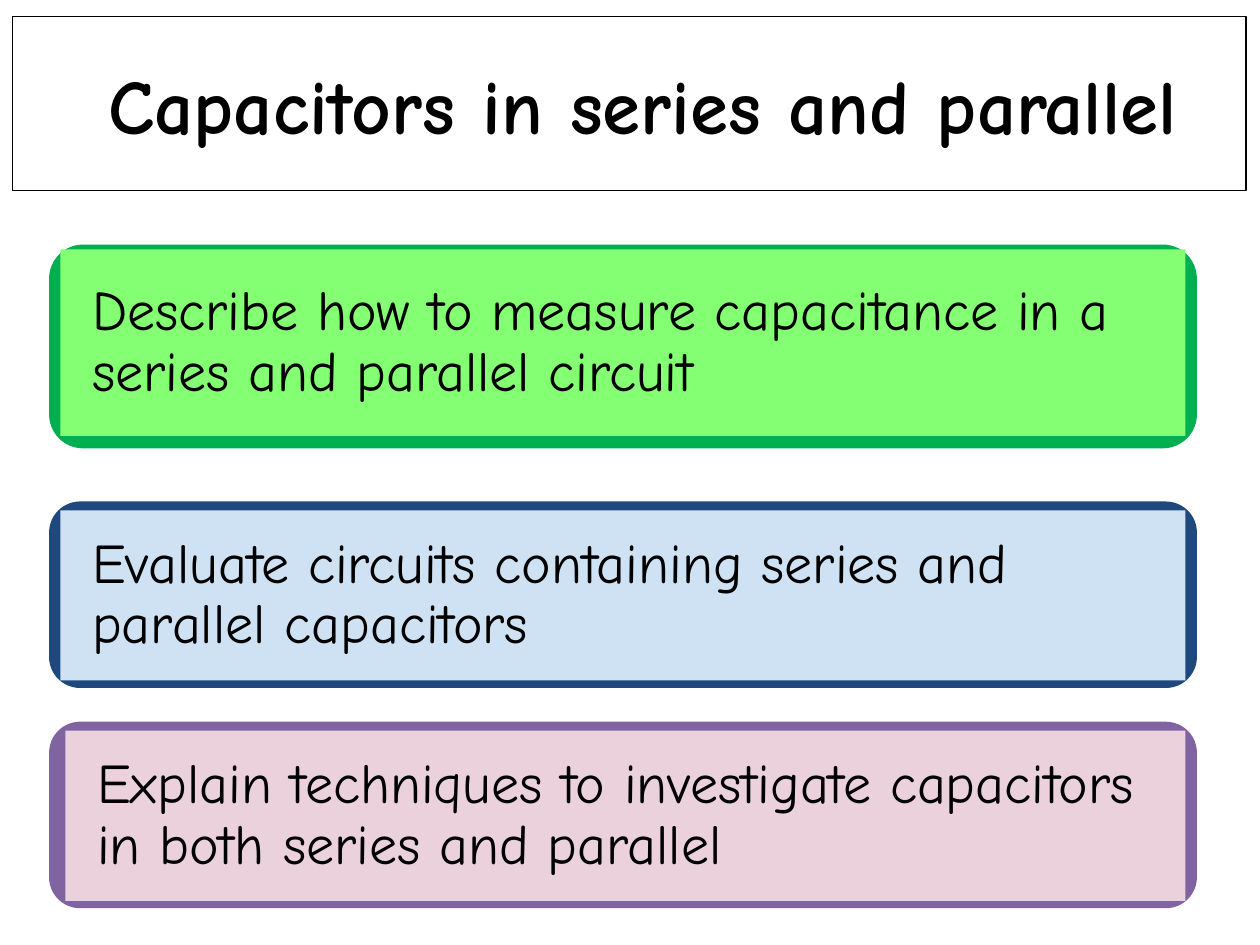
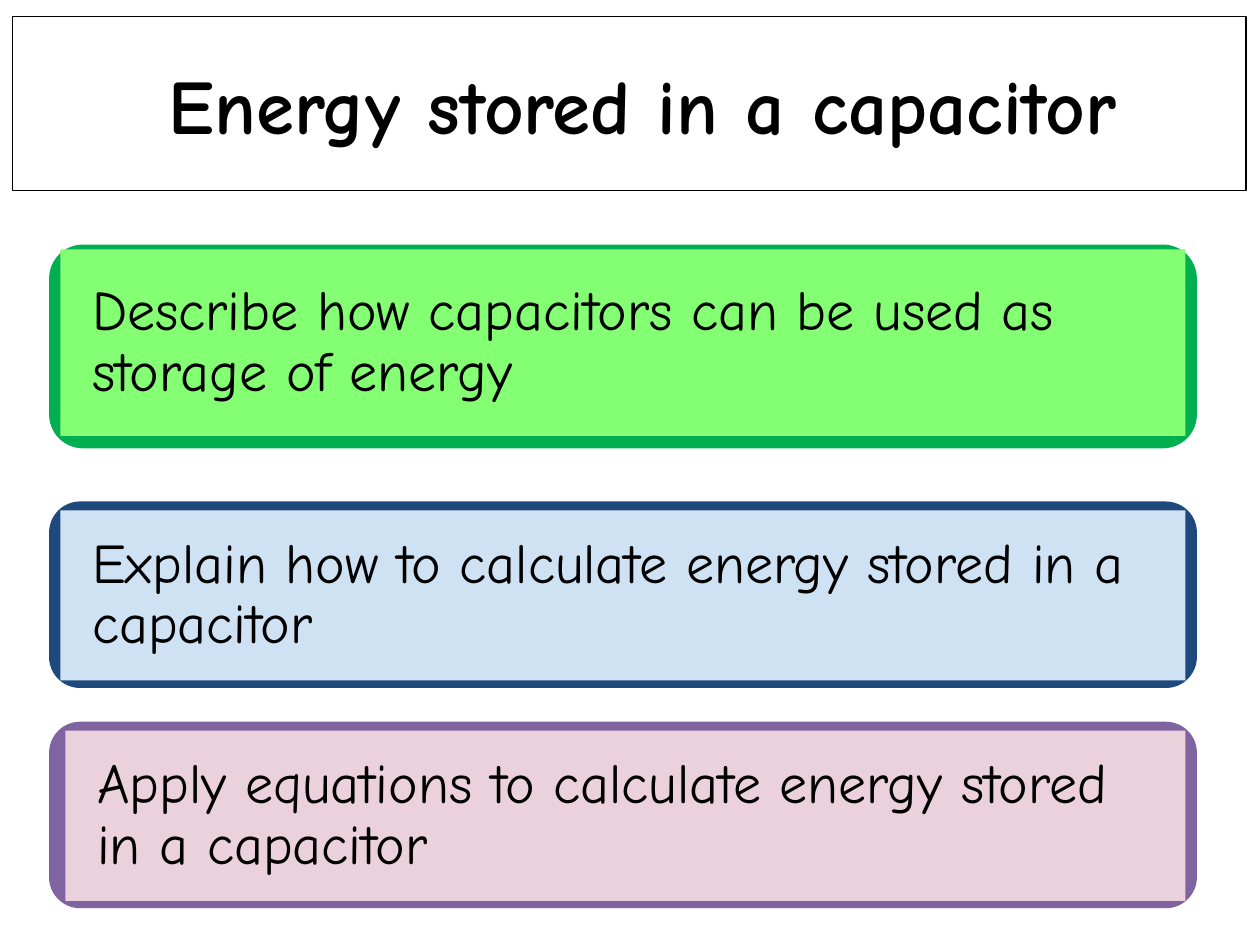
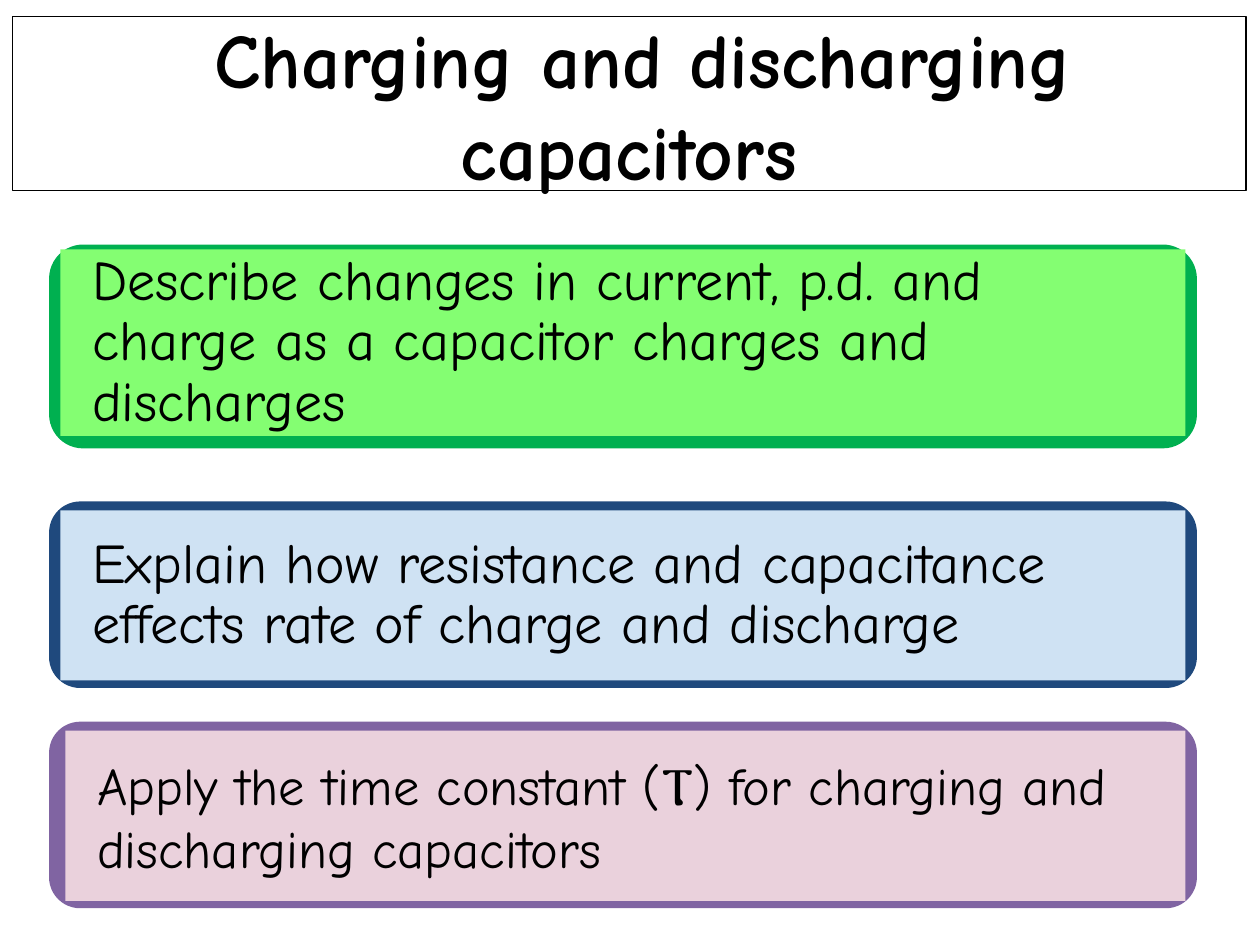
from collections import namedtuple

from pptx import Presentation
from pptx.dml.color import RGBColor
from pptx.enum.shapes import MSO_SHAPE
from pptx.enum.text import MSO_ANCHOR, MSO_AUTO_SIZE, PP_ALIGN
from pptx.util import Cm, Pt

RECT = MSO_SHAPE.RECTANGLE
ROUNDED = MSO_SHAPE.ROUNDED_RECTANGLE
MIDDLE = MSO_ANCHOR.MIDDLE
NO_FIT = MSO_AUTO_SIZE.NONE
CENTER, LEFT = PP_ALIGN.CENTER, PP_ALIGN.LEFT

BLACK = RGBColor(0x00, 0x00, 0x00)
WHITE = RGBColor(0xFF, 0xFF, 0xFF)
GREEN = RGBColor(0x00, 0xB0, 0x50)
LIGHT_GREEN = RGBColor(0x84, 0xFE, 0x72)
BLUE = RGBColor(0x1F, 0x49, 0x7D)
LIGHT_BLUE = RGBColor(0xCF, 0xE2, 0xF3)
PURPLE = RGBColor(0x80, 0x64, 0xA2)
LIGHT_PINK = RGBColor(0xEA, 0xD1, 0xDC)

FONT = "Comic Neue"
TITLE_ONLY = 5

# Lengths in cm; insets are left, top, right, bottom from frame to panel
Box = namedtuple("Box", "left top width height")
Card = namedtuple("Card", "box insets frame panel")

TITLE_BOX = Box(0.25, 0.33, 24.87, 3.51)
CARD_LEFT, CARD_WIDTH = 0.99, 23.14
CARDS = [
    Card(Box(CARD_LEFT, 4.93, CARD_WIDTH, 4.11), (0.23, 0.1, 0.23, 0.25),
         GREEN, LIGHT_GREEN),
    Card(Box(CARD_LEFT, 10.11, CARD_WIDTH, 3.76), (0.23, 0.18, 0.23, 0.15),
         BLUE, LIGHT_BLUE),
    Card(Box(CARD_LEFT, 14.55, CARD_WIDTH, 3.76), (0.33, 0.18, 0.23, 0.15),
         PURPLE, LIGHT_PINK),
]

# Each objective: text, size in points, line spacing
Objective = namedtuple("Objective", "text size spacing", defaults=(32, 0.9))
LESSONS = [
    (" Capacitors in series and parallel", [
        Objective("Describe how to measure capacitance in a series and "
                  "parallel circuit"),
        Objective("Evaluate circuits containing series and parallel "
                  "capacitors"),
        Objective("Explain techniques to investigate capacitors in both "
                  "series and parallel"),
    ]),
    (" Energy stored in a capacitor", [
        Objective("Describe how capacitors can be used as storage of energy"),
        Objective("Explain how to calculate energy stored in a capacitor"),
        Objective("Apply equations to calculate energy stored in a capacitor"),
    ]),
    (" Charging and discharging capacitors", [
        Objective("Describe changes in current, p.d. and charge as a "
                  "capacitor charges and discharges"),
        Objective("Explain how resistance and capacitance effects rate of "
                  "charge and discharge"),
        Objective("Apply the time constant (Ⲧ) for charging and discharging "
                  "capacitors", size=30, spacing=1.0),
    ]),
]


def write(sp, text, size, align, spacing, margins, bold=False):
    """Fill a shape with one paragraph; margins are horizontal, vertical."""
    tf = sp.text_frame
    tf.word_wrap = True
    tf.auto_size = NO_FIT
    tf.vertical_anchor = MIDDLE
    tf.margin_left = tf.margin_right = Cm(margins[0])
    tf.margin_top = tf.margin_bottom = Cm(margins[1])
    p = tf.paragraphs[0]
    p.text = text
    p.alignment = align
    p.line_spacing = spacing
    p.font.name = FONT
    p.font.size = Pt(size)
    p.font.bold = bold
    p.font.color.rgb = BLACK


def add_block(shapes, kind, box, color):
    sp = shapes.add_shape(kind, *map(Cm, box))
    sp.shadow.inherit = False
    sp.fill.solid()
    sp.fill.fore_color.rgb = color
    sp.line.fill.background()
    return sp


def place_title(s, box, text):
    sp = s.shapes.title
    sp.left, sp.top, sp.width, sp.height = map(Cm, box)
    sp.fill.solid()
    sp.fill.fore_color.rgb = WHITE
    sp.line.color.rgb = BLACK
    sp.line.width = Pt(0.75)
    write(sp, text, 44, CENTER, 1.0, (0.25, 0.13), bold=True)


def add_card(s, card, objective):
    """Rounded frame with a panel of text inside it."""
    box = card.box
    left, top, right, bottom = card.insets
    panel_box = Box(box.left + left, box.top + top,
                    box.width - left - right, box.height - top - bottom)
    shapes = s.shapes.add_group_shape().shapes
    add_block(shapes, ROUNDED, box, card.frame)
    panel = add_block(shapes, RECT, panel_box, card.panel)
    write(panel, objective.text, objective.size, LEFT, objective.spacing,
          (0.64, 0))


def add_lesson(prs, title, objectives):
    s = prs.slides.add_slide(prs.slide_layouts[TITLE_ONLY])
    place_title(s, TITLE_BOX, title)
    for card, objective in zip(CARDS, objectives):
        add_card(s, card, objective)


def main():
    prs = Presentation()
    prs.slide_width, prs.slide_height = Cm(25.4), Cm(19.05)
    for title, objectives in LESSONS:
        add_lesson(prs, title, objectives)
    prs.save("out.pptx")


if __name__ == "__main__":
    main()
